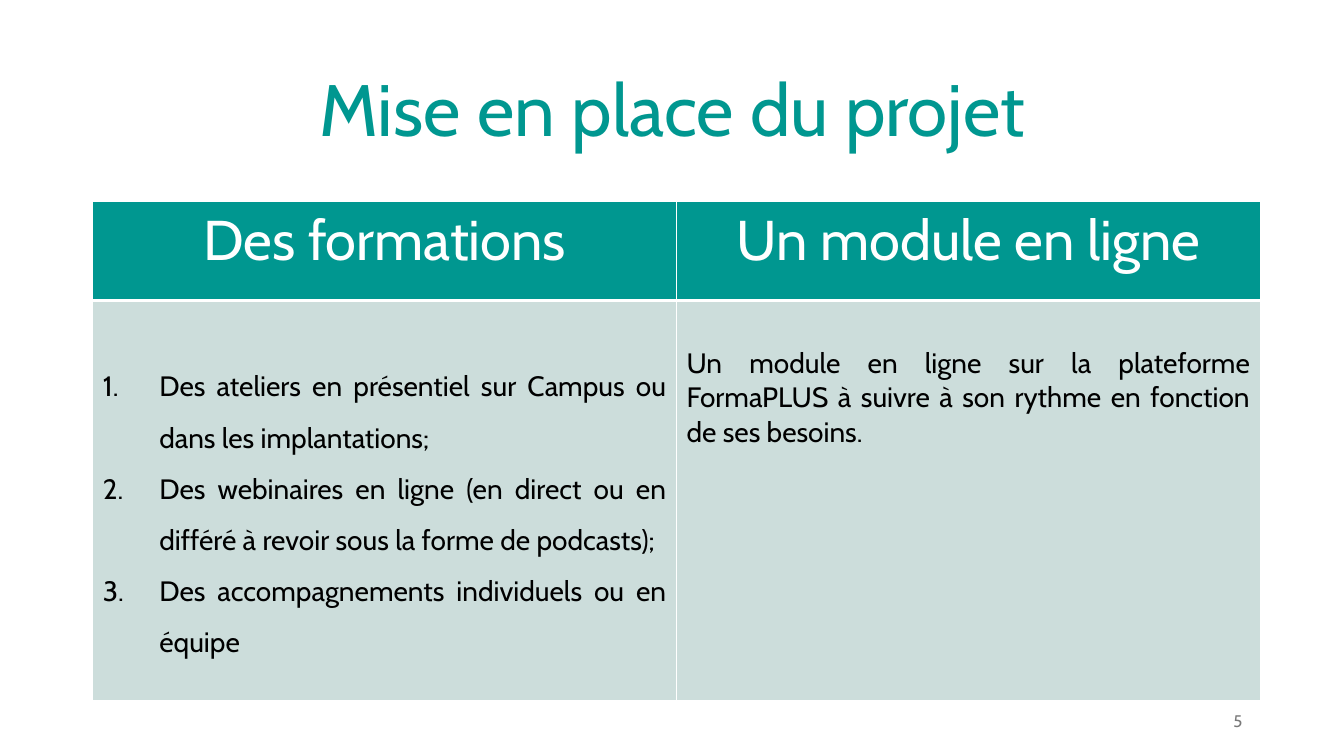
from lxml.etree import SubElement
from pptx import Presentation
from pptx.dml.color import RGBColor
from pptx.enum.text import MSO_ANCHOR as Anchor, PP_ALIGN as Align
from pptx.oxml.ns import qn
from pptx.util import Inches, Pt

TEAL = RGBColor(0x00, 0x97, 0x90)
PALE = RGBColor(0xCC, 0xDD, 0xDB)
GREY = RGBColor(0x79, 0x79, 0x79)
WHITE = RGBColor(0xFF, 0xFF, 0xFF)
BLACK = RGBColor(0x00, 0x00, 0x00)

LEFT, COL = Inches(0.92), Inches(5.79)
ROWS = [Inches(0.98), Inches(3.97)]
HEADS = ["Des formations", "Un module en ligne"]
STEPS = [
    "Des ateliers en présentiel sur Campus ou dans les implantations;",
    "Des webinaires en ligne (en direct ou en différé à revoir sous la forme de podcasts);",
    "Des accompagnements individuels ou en équipe",
]
MODULE = ["Un module en ligne sur la plateforme FormaPLUS à suivre à son rythme "
          "en fonction de ses besoins."]


def write(frame, lines, size, color, align):
    frame.word_wrap = True
    for i, line in enumerate(lines):
        para = frame.add_paragraph() if i else frame.paragraphs[0]
        para.text = line
        para.alignment = align
        para.font.name = "Cabin"
        para.font.size = Pt(size)
        para.font.color.rgb = color


def border(cell, widths):
    """Draw white edges, widths in points by side."""
    props = cell._tc.get_or_add_tcPr()
    for i, side in enumerate(["L", "R", "T", "B"]):
        line = SubElement(props, qn("a:ln" + side), w=str(Pt(widths[side])))
        fill = SubElement(line, qn("a:solidFill"))
        SubElement(fill, qn("a:srgbClr"), val=str(WHITE))
        props.insert(i, line)


deck = Presentation()
deck.slide_width, deck.slide_height = Inches(13.33), Inches(7.5)
slide = deck.slides.add_slide(deck.slide_layouts[6])

# Title and page number
title = slide.shapes.add_textbox(LEFT, Inches(0.4), Inches(11.5), Inches(1.45))
page = slide.shapes.add_textbox(Inches(9.42), Inches(6.95), Inches(3), Inches(0.4))
write(title.text_frame, ["Mise en place du projet"], 52, TEAL, Align.CENTER)
write(page.text_frame, ["5"], 12, GREY, Align.RIGHT)
title.text_frame.paragraphs[0].line_spacing = 0.9
for box in (title, page):
    box.text_frame.vertical_anchor = Anchor.MIDDLE

# Table: a heading and a body in each column
table = slide.shapes.add_table(2, 2, LEFT, Inches(2), 2 * COL, sum(ROWS)).table
for row, high in zip(table.rows, ROWS):
    row.height = high
for c, (head, body, top) in enumerate(zip(HEADS, [STEPS, MODULE], [0.52, 0.46])):
    table.columns[c].width = COL
    upper, lower = table.cell(0, c), table.cell(1, c)
    write(upper.text_frame, [head], 40, WHITE, Align.CENTER)
    write(lower.text_frame, body, 20, BLACK, Align.JUSTIFY)
    lower.margin_top = Inches(top)
    for cell, fill, edges in ((upper, TEAL, {"T": 1, "B": 3}),
                              (lower, PALE, {"T": 3, "B": 1})):
        cell.fill.solid()
        cell.fill.fore_color.rgb = fill
        border(cell, {"L": 1, "R": 1, **edges})

# Numbered steps
for para in table.cell(1, 0).text_frame.paragraphs:
    para.line_spacing = 1.5
    props = para._p.get_or_add_pPr()
    props.set("marL", str(Inches(0.56)))
    props.set("indent", str(-Inches(0.56)))
    number = SubElement(props, qn("a:buAutoNum"), type="arabicPeriod")
    props.find(qn("a:defRPr")).addprevious(number)

deck.save("out.pptx")
